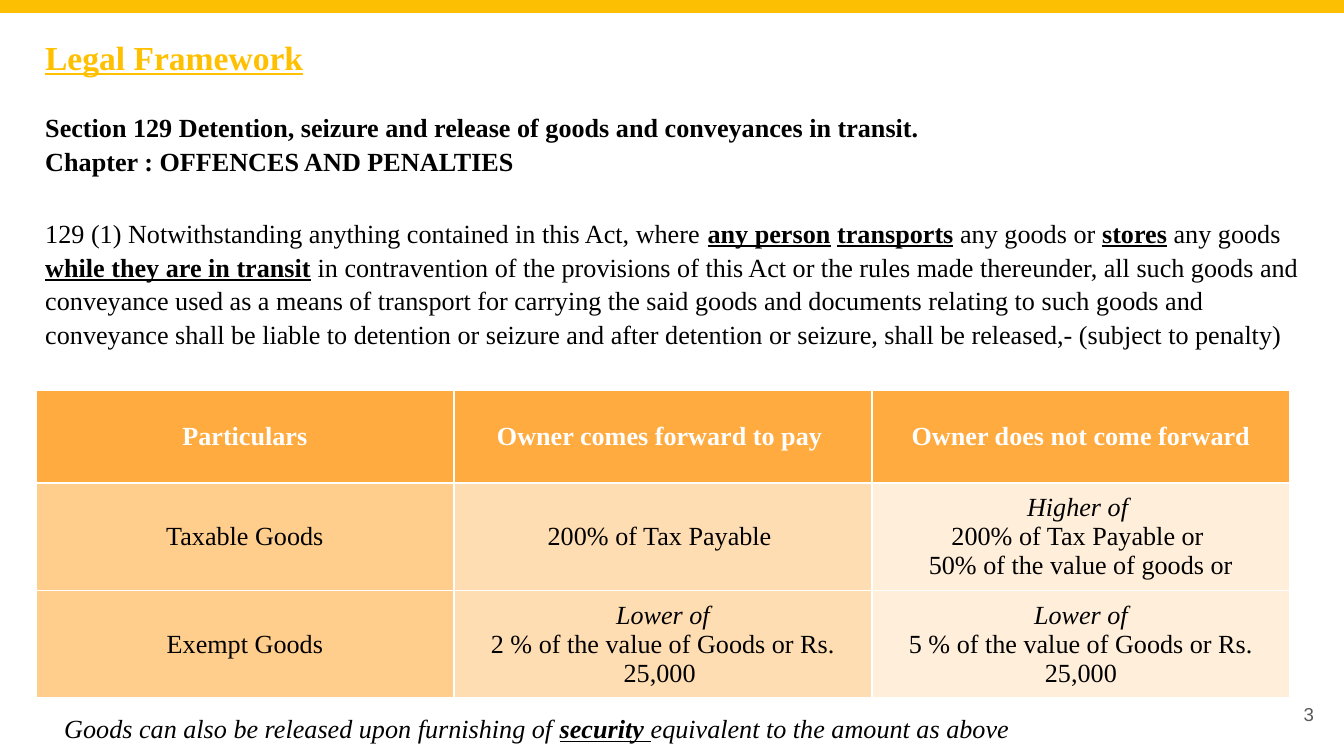
"""Builds the Legal Framework slide on Section 129 penalties."""
from pptx import Presentation
from pptx.dml.color import RGBColor
from pptx.enum.shapes import MSO_SHAPE as Shape
from pptx.enum.text import MSO_ANCHOR as Anchor, PP_ALIGN as Align
from pptx.util import Pt

PX = 6804
SERIF = "Times New Roman"
BLACK, WHITE, GREY = "000000", "FFFFFF", "595959"
GOLD, BAR_GOLD = "FFC000", "FCBF01"

TITLE = [[("Legal Framework", "bu")]]
SECTION = [
    [("Section 129 Detention, seizure and release of goods and conveyances in transit.", "b")],
    [("Chapter : OFFENCES AND PENALTIES", "b")],
]
PROVISION = [[
    ("129 (1) Notwithstanding anything contained in this Act, where ", ""),
    ("any person", "bu"), (" ", ""), ("transports", "bu"),
    (" any goods or ", ""), ("stores", "bu"), (" any goods ", ""),
    ("while they are in transit", "bu"),
    (" in contravention of the provisions of this Act or the rules made thereunder, "
     "all such goods and conveyance used as a means of transport for carrying the said "
     "goods and documents relating to such goods and conveyance shall be liable to "
     "detention or seizure and after detention or seizure, shall be released,- "
     "(subject to penalty)", ""),
]]
RELEASE_NOTE = [[
    ("Goods can also be released upon furnishing of ", "i"),
    ("security ", "biu"),
    ("equivalent to the amount as above", "i"),
]]
PAGE_NUMBER = [[("3", "")]]
PENALTIES = [
    [[[("Particulars", "b")]],
     [[("Owner comes forward to pay ", "b")]],
     [[("Owner does not come forward", "b")]]],
    [[[("Taxable Goods", "")]],
     [[("200% of Tax Payable ", "")]],
     [[("Higher of ", "i")], [("200% of Tax Payable or ", "")],
      [("50% of the value of goods or", "")]]],
    [[[("Exempt Goods", "")]],
     [[("Lower of", "i")], [("2 % of the value of Goods or Rs. 25,000 ", "")]],
     [[("Lower of", "i")], [("5 % of the value of Goods or Rs. 25,000", "")]]],
]
HEADER_FILLS = ["FFAB40"] * 3
BODY_FILLS = ["FFCD8C", "FFDDB3", "FFEED9"]
ROW_HEIGHTS = [93, 107, 107]
COLUMN_WIDTH = 418


def rgb(code):
    return RGBColor.from_string(code)


def place(*lengths):
    return [length * PX for length in lengths]


def write(frame, paragraphs, color=BLACK, size=14, font=SERIF, align=Align.LEFT, spacing=1.0):
    for index, pieces in enumerate(paragraphs):
        paragraph = frame.add_paragraph() if index else frame.paragraphs[0]
        paragraph.alignment = align
        paragraph.line_spacing = spacing
        for words, style in pieces:
            run = paragraph.add_run()
            run.text = words
            run.font.name, run.font.size = font, Pt(size)
            run.font.color.rgb = rgb(color)
            run.font.bold = "b" in style
            run.font.italic = "i" in style
            run.font.underline = "u" in style


def set_frame(frame, inset=None, anchor=Anchor.TOP, wrap=True):
    frame.word_wrap = wrap
    frame.vertical_anchor = anchor
    if inset is not None:
        frame.margin_left = frame.margin_right = inset * PX
        frame.margin_top = frame.margin_bottom = inset * PX


def add_text(slide, box, paragraphs, inset=None, anchor=Anchor.TOP, wrap=True, **look):
    frame = slide.shapes.add_textbox(*place(*box)).text_frame
    set_frame(frame, inset, anchor, wrap)
    write(frame, paragraphs, **look)


def add_penalties(slide, left, top):
    box = place(left, top, COLUMN_WIDTH * len(BODY_FILLS), sum(ROW_HEIGHTS))
    table = slide.shapes.add_table(len(PENALTIES), len(BODY_FILLS), *box).table
    for column in table.columns:
        column.width = COLUMN_WIDTH * PX
    for r, (cells, height) in enumerate(zip(PENALTIES, ROW_HEIGHTS)):
        table.rows[r].height = height * PX
        fills = BODY_FILLS if r else HEADER_FILLS
        for c, (paragraphs, fill) in enumerate(zip(cells, fills)):
            cell = table.cell(r, c)
            cell.fill.solid()
            cell.fill.fore_color.rgb = rgb(fill)
            cell.vertical_anchor = Anchor.MIDDLE
            write(cell.text_frame, paragraphs, BLACK if r else WHITE, align=Align.CENTER)


def main():
    deck = Presentation()
    deck.slide_width, deck.slide_height = place(1344, 756)
    slide = deck.slides.add_slide(deck.slide_layouts[5])

    title = slide.shapes.title
    title.left, title.top, title.width, title.height = place(32, 24, 749, 85)
    set_frame(title.text_frame, 13)
    write(title.text_frame, TITLE, GOLD, 18)

    bar = slide.shapes.add_shape(Shape.RECTANGLE, *place(0, 0, 1344, 13))
    bar.shadow.inherit = False
    bar.fill.solid()
    bar.fill.fore_color.rgb = rgb(BAR_GOLD)
    bar.line.fill.background()

    add_text(slide, (1246, 685, 81, 58), PAGE_NUMBER, 13, Anchor.MIDDLE,
             color=GREY, size=10, font="Arial", align=Align.RIGHT)
    add_text(slide, (32, 102, 1241, 109), SECTION, spacing=1.08)
    add_text(slide, (32, 208, 1285, 140), PROVISION, spacing=1.08)
    add_penalties(slide, 36, 390)
    add_text(slide, (51, 706, 981, 46), RELEASE_NOTE, wrap=False)
    deck.save("out.pptx")


if __name__ == "__main__":
    main()
